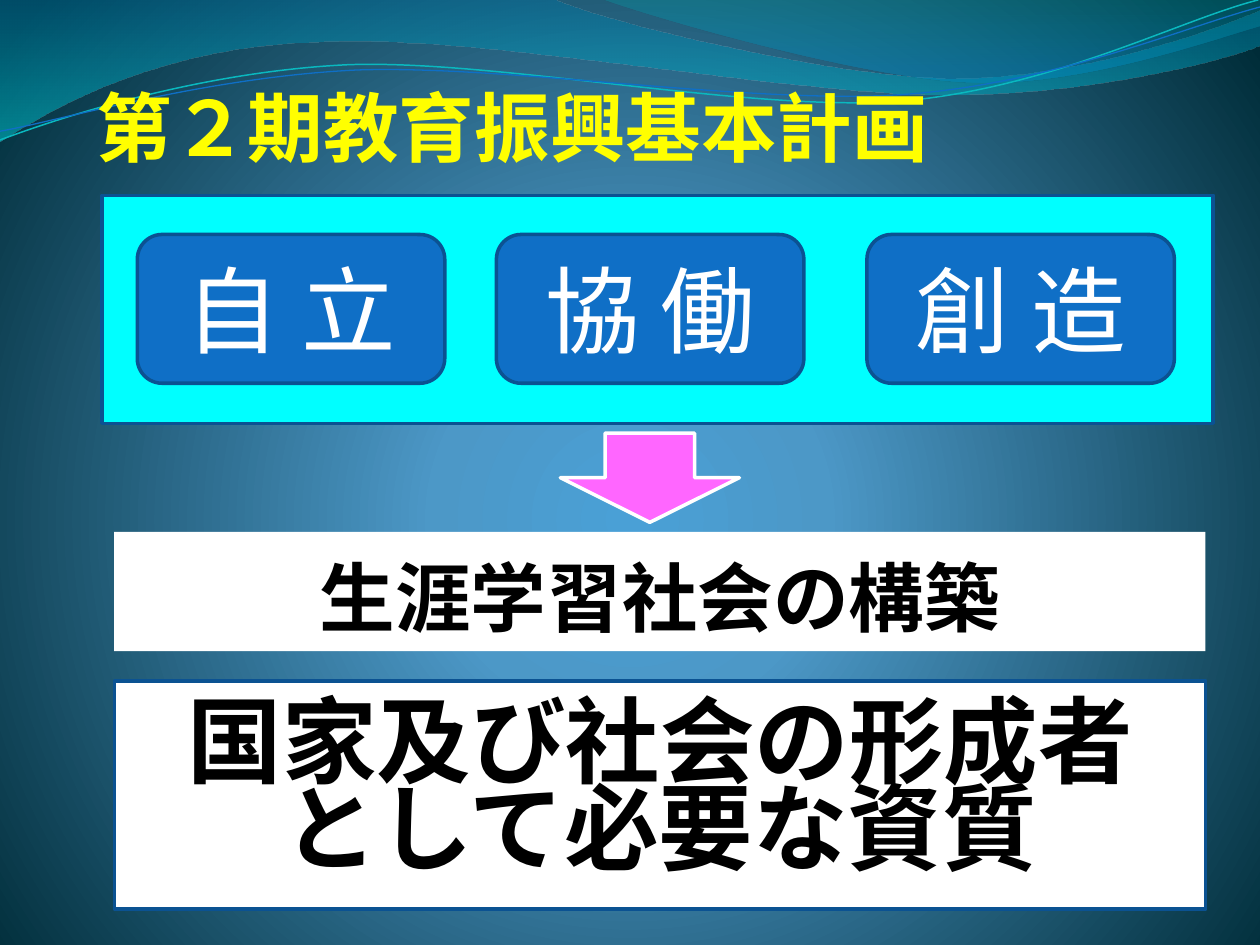
"""Build the slide on the second basic plan for the promotion of education."""
from lxml.etree import SubElement
from pptx import Presentation
from pptx.dml.color import RGBColor
from pptx.enum.shapes import MSO_SHAPE
from pptx.enum.text import MSO_ANCHOR, MSO_AUTO_SIZE, PP_ALIGN
from pptx.oxml import parse_xml
from pptx.oxml.ns import nsdecls, qn
from pptx.util import Pt

BLUE = RGBColor(0x0F, 0x6F, 0xC6)
NAVY = RGBColor(0x0B, 0x52, 0x92)
TEAL = RGBColor(0x0A, 0xB8, 0xBF)
CYAN = RGBColor(0x00, 0xFF, 0xFF)
PINK = RGBColor(0xFF, 0x66, 0xFF)
YELLOW = RGBColor(0xFF, 0xFF, 0x00)
WHITE = RGBColor(0xFF, 0xFF, 0xFF)
BLACK = RGBColor(0x00, 0x00, 0x00)
SKY = RGBColor(0x4A, 0xA0, 0xD6)
STEEL = RGBColor(0x4C, 0x98, 0xC7)
MIDNIGHT = RGBColor(0x00, 0x2C, 0x38)
OCEAN = RGBColor(0x00, 0x74, 0xA1)
AQUA = RGBColor(0x00, 0xC6, 0xCF)
LAGOON = RGBColor(0x00, 0xA1, 0xA9)
AZURE = RGBColor(0x00, 0x8B, 0xBF)

CJK_FONT = "Noto Sans CJK JP"
DOWNWARD = '<a:lin ang="5400000" scaled="0"/>'
FROM_CENTRE = ('<a:path path="circle"><a:fillToRect l="10000" t="110000" '
               'r="10000" b="100000"/></a:path>')


def write_text(frame, text, size=54, color=BLACK, font=CJK_FONT, bold=True, small_caps=False,
               align=PP_ALIGN.CENTER, anchor=MSO_ANCHOR.MIDDLE, spacing=None, bottom=3.6):
    """Fill a text frame, one paragraph for each line of text."""
    frame.text = text
    frame.word_wrap = True
    frame.auto_size = MSO_AUTO_SIZE.NONE
    frame.vertical_anchor = anchor
    frame.margin_bottom = Pt(bottom)
    for paragraph in frame.paragraphs:
        paragraph.alignment = align
        if spacing:
            paragraph.line_spacing = Pt(spacing)
        for run in paragraph.runs:
            run.font.size = Pt(size)
            run.font.bold = bold
            run.font.name = font
            run.font.color.rgb = color
            SubElement(run.font._element, qn("a:ea"), typeface=CJK_FONT)
            if small_caps:
                run.font._element.set("cap", "small")


def set_gradient(fill, owner, stops, direction):
    """Give a fill its gradient stops of position, colour and opacity."""
    fill.gradient()
    marks = "".join(
        f'<a:gs pos="{position * 1000}"><a:srgbClr val="{color}">'
        f'<a:alpha val="{opacity * 1000}"/></a:srgbClr></a:gs>'
        for position, color, opacity in stops)
    gradient = parse_xml(f'<a:gradFill {nsdecls("a")} rotWithShape="1">'
                         f'<a:gsLst>{marks}</a:gsLst>{direction}</a:gradFill>')
    current = next(owner.iter(qn("a:gradFill")))
    current.getparent().replace(current, gradient)


def bend(outline, segments):
    """Turn the segments that have control points into Bezier curves."""
    sides = list(outline._element.iter(qn("a:lnTo")))
    for side, segment in zip(sides, segments):
        if len(segment) == 3:
            side.tag = qn("a:cubicBezTo")
            side.clear()
            for x, y in segment:
                SubElement(side, qn("a:pt"), x=str(Pt(x) - outline.left),
                           y=str(Pt(y) - outline.top))


class PlanSlide:
    """Hold the current slide and its style of outlines and fills."""

    def __init__(self, slide):
        self.slide = slide
        self.shapes = slide.shapes
        self.outline = 2

    def background(self, stops):
        """Paint the slide with a radial gradient."""
        set_gradient(self.slide.background.fill, self.slide._element, stops, FROM_CENTRE)

    def wave(self, start, segments, stops=None, line=None, width=0.75):
        """Draw a filled wave, or an open one if it has only a line."""
        corners = [(Pt(x), Pt(y)) for x, y in (start, *(part[-1] for part in segments))]
        builder = self.shapes.build_freeform(*corners[0], scale=1.0)
        builder.add_line_segments(corners[1:], close=bool(stops))
        ribbon = builder.convert_to_shape()
        bend(ribbon, segments)
        ribbon.shadow.inherit = False
        if stops:
            set_gradient(ribbon.fill, ribbon._element, stops, DOWNWARD)
            ribbon.line.fill.background()
        else:
            ribbon.fill.background()
            ribbon.line.color.rgb = line
            ribbon.line.width = Pt(width)

    def title(self, text, left, top, width, height, **style):
        """Place the title in front of what is drawn so far."""
        heading = self.shapes.title
        heading.left, heading.top = Pt(left), Pt(top)
        heading.width, heading.height = Pt(width), Pt(height)
        write_text(heading.text_frame, text, **style)
        self.shapes._spTree.append(heading._element)

    def panel(self, kind, left, top, width, height, fill, line=None, text="", **style):
        """Draw a preset shape with an optional outline and text."""
        panel = self.shapes.add_shape(kind, Pt(left), Pt(top), Pt(width), Pt(height))
        panel.shadow.inherit = False
        panel.fill.solid()
        panel.fill.fore_color.rgb = fill
        if line is None:
            panel.line.fill.background()
        else:
            panel.line.color.rgb = line
            panel.line.width = Pt(self.outline)
        if text:
            write_text(panel.text_frame, text, **style)


def main():
    """Build and save the slide."""
    presentation = Presentation()
    presentation.slide_width, presentation.slide_height = Pt(720), Pt(540)
    plan = PlanSlide(presentation.slides.add_slide(presentation.slide_layouts[5]))

    plan.background([(0, SKY, 100), (25, STEEL, 100), (100, MIDNIGHT, 100)])
    plan.wave((0, 0), [
        [(317, 0)],
        [(343, 12), (478, 45), (546, 45)],
        [(614, 45), (690, 19), (720, 6)],
        [(720, 26)],
        [(708, 32), (626, 55), (537, 54)],
        [(448, 54), (275, 20), (185, 24)],
        [(93, 26), (33, 60), (0, 81)],
    ], stops=[(0, OCEAN, 45), (100, AQUA, 55)])
    plan.wave((345, 0), [
        [(366, 8), (491, 45), (554, 47)],
        [(616, 50), (692, 23), (720, 15)],
        [(720, 0)],
    ], stops=[(0, LAGOON, 30), (80, AZURE, 45)])
    plan.wave((0, 80), [
        [(35, 67), (114, 41), (199, 37)],
        [(284, 34), (427, 64), (513, 58)],
        [(600, 51), (675, 11), (719, 0)],
    ], line=TEAL, width=0.85)
    plan.wave((0, 75), [
        [(34, 69), (118, 44), (204, 40)],
        [(290, 37), (430, 60), (516, 54)],
        [(602, 48), (678, 15), (720, 4)],
    ], line=BLUE)

    plan.panel(MSO_SHAPE.RECTANGLE, 58.3, 111.6, 635, 130.3, CYAN, NAVY)
    plan.title("第２期教育振興基本計画", 48, 31.7, 635, 118.8, color=YELLOW, small_caps=True,
               align=PP_ALIGN.LEFT, anchor=MSO_ANCHOR.BOTTOM, bottom=50)
    plan.panel(MSO_SHAPE.RECTANGLE, 65.3, 304, 623.5, 68.2, WHITE, text="生涯学習社会の構築",
               small_caps=True, anchor=MSO_ANCHOR.BOTTOM)
    plan.panel(MSO_SHAPE.DOWN_ARROW, 320.2, 247.5, 102.3, 51, PINK, WHITE)
    for left, value in ((78.5, "自 立"), (495.4, "創 造"), (283.7, "協 働")):
        plan.panel(MSO_SHAPE.ROUNDED_RECTANGLE, left, 134, 175.7, 85, BLUE, NAVY,
                   text=value, color=WHITE, font="Arial", bold=False)
    plan.panel(MSO_SHAPE.RECTANGLE, 65.5, 389.2, 623.5, 130.3, WHITE, NAVY,
               text="国家及び社会の形成者\nとして必要な資質", spacing=50)

    presentation.save("out.pptx")


if __name__ == "__main__":
    main()
